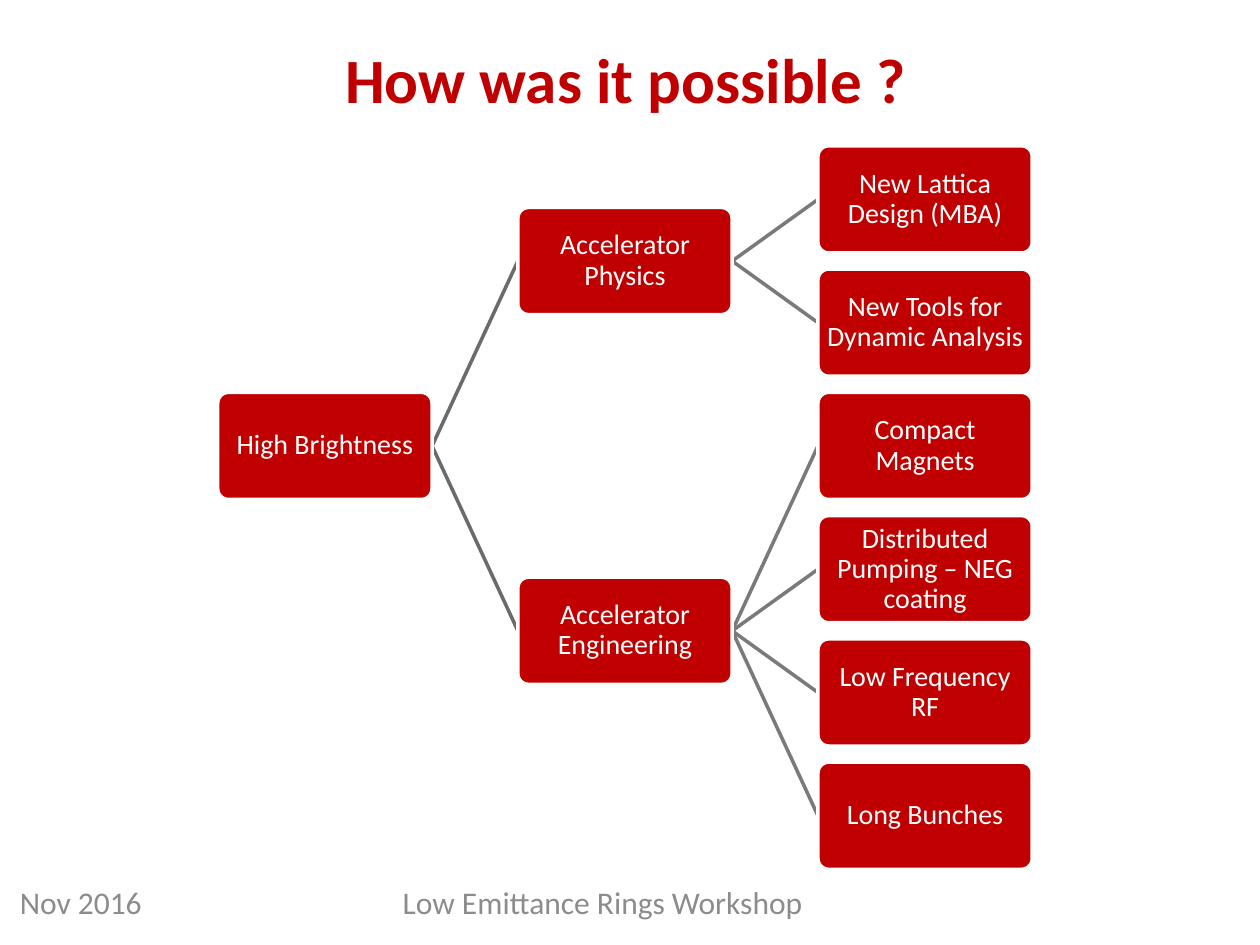
from lxml.etree import SubElement
from pptx import Presentation
from pptx.dml.color import RGBColor
from pptx.enum.shapes import MSO_CONNECTOR, MSO_SHAPE
from pptx.enum.text import MSO_ANCHOR, PP_ALIGN
from pptx.oxml.ns import qn
from pptx.util import Cm, Pt

RED = RGBColor(0xC0, 0x00, 0x00)
WHITE = RGBColor(0xFF, 0xFF, 0xFF)
GRAY = RGBColor(0x8C, 0x8C, 0x8C)
LINE_COLORS = [RGBColor(0x6B, 0x6B, 0x6E), RGBColor(0x7A, 0x7A, 0x7C)]
FONT = "Calibri"

TREE = ("High Brightness", [
    ("Accelerator Physics", [
        ("New Lattica Design (MBA)", []),
        ("New Tools for Dynamic Analysis", []),
    ]),
    ("Accelerator Engineering", [
        ("Compact Magnets", []),
        ("Distributed Pumping – NEG coating", []),
        ("Low Frequency RF", []),
        ("Long Bunches", []),
    ]),
])

TEXTS = [
    ("How was it possible ?", (0.71, 0.33, 23.8, 2.13), 36, True, RED, PP_ALIGN.CENTER, MSO_ANCHOR.BOTTOM),
    ("Low Emittance Rings Workshop", (6.5, 17.68, 11.3, 1.02), 18, False, GRAY, PP_ALIGN.CENTER, MSO_ANCHOR.TOP),
    ("Nov 2016", (0.15, 17.68, 5.16, 1.02), 18, False, GRAY, PP_ALIGN.LEFT, MSO_ANCHOR.TOP),
]

LEFT, TOP = 4.39, 2.94
COL_STEP, ROW_STEP = 6.05, 2.485
BOX_W, BOX_H = 4.32, 2.16
INSET = Cm(0.03)


def write(tf, text, size, bold, color, align, anchor):
    tf.word_wrap = True
    tf.vertical_anchor = anchor
    p = tf.paragraphs[0]
    p.alignment = align
    r = p.add_run()
    r.text = text
    r.font.name = FONT
    r.font.size = Pt(size)
    r.font.bold = bold
    r.font.color.rgb = color
    return p


def add_box(slide, text, level, row):
    sp = slide.shapes.add_shape(
        MSO_SHAPE.ROUNDED_RECTANGLE,
        Cm(LEFT + level * COL_STEP), Cm(TOP + row * ROW_STEP), Cm(BOX_W), Cm(BOX_H))
    sp.adjustments[0] = 0.1
    sp.shadow.inherit = False
    sp.fill.solid()
    sp.fill.fore_color.rgb = RED
    sp.line.color.rgb = WHITE
    sp.line.width = Pt(2)
    tf = sp.text_frame
    tf.margin_left = tf.margin_right = tf.margin_top = tf.margin_bottom = INSET
    p = write(tf, text, 16, False, WHITE, PP_ALIGN.CENTER, MSO_ANCHOR.MIDDLE)
    p.line_spacing = 0.9
    return sp


def add_link(slide, parent, child, color):
    line = slide.shapes.add_connector(MSO_CONNECTOR.STRAIGHT, 0, 0, 0, 0)
    line.begin_connect(parent, 3)
    line.end_connect(child, 1)
    line.line.color.rgb = color
    line.line.width = Pt(2)
    SubElement(line._element.spPr, qn("a:effectLst"))
    child._element.addprevious(line._element)


def add_branch(slide, node, level=0, next_row=0):
    text, children = node
    boxes, rows = [], []
    for child in children:
        box, row, next_row = add_branch(slide, child, level + 1, next_row)
        boxes.append(box)
        rows.append(row)
    if not children:
        rows, next_row = [next_row], next_row + 1
    row = (rows[0] + rows[-1]) / 2
    sp = add_box(slide, text, level, row)
    for box in boxes:
        add_link(slide, sp, box, LINE_COLORS[level])
    return sp, row, next_row


def main():
    prs = Presentation()
    prs.slide_width, prs.slide_height = Cm(25.4), Cm(19.05)
    s = prs.slides.add_slide(prs.slide_layouts[6])
    for text, place, *style in TEXTS:
        tb = s.shapes.add_textbox(*map(Cm, place))
        write(tb.text_frame, text, *style)
    add_branch(s, TREE)
    prs.save("out.pptx")


if __name__ == "__main__":
    main()
